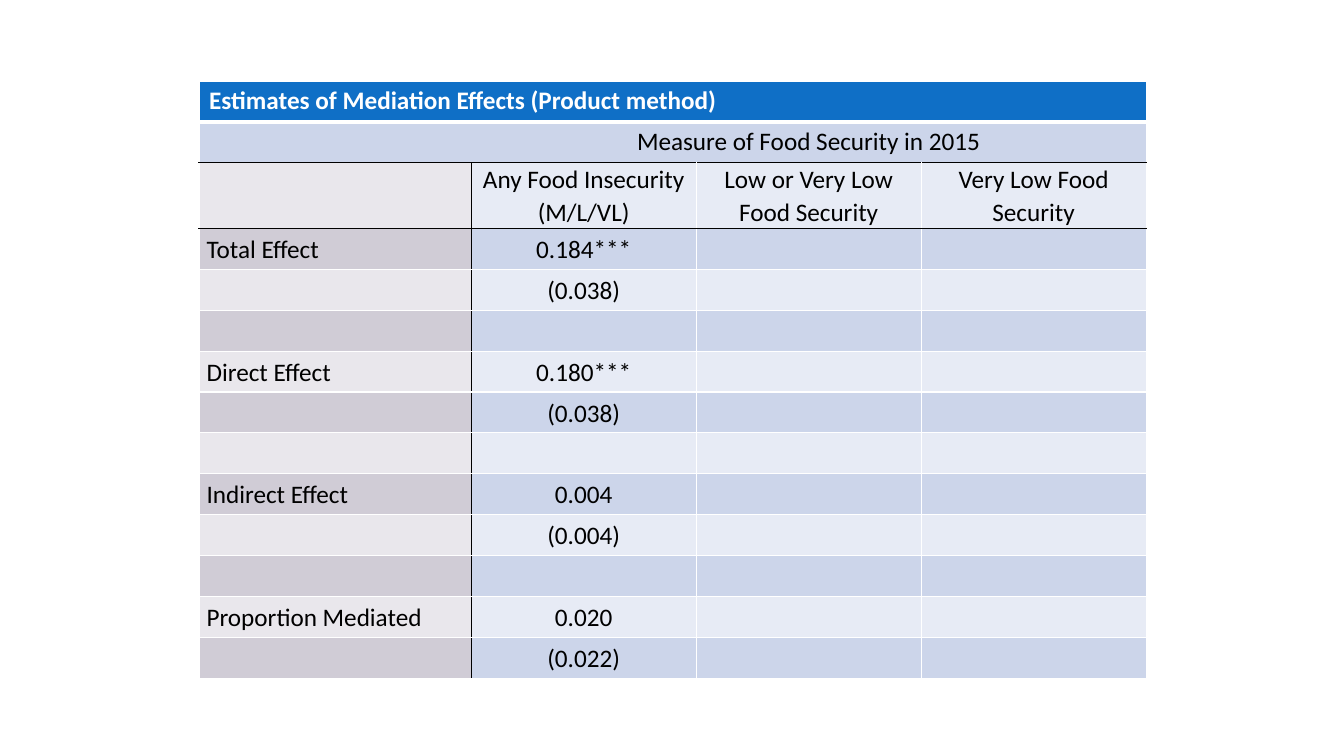
from dataclasses import dataclass

from lxml.etree import SubElement
from pptx import Presentation
from pptx.dml.color import RGBColor
from pptx.enum.text import MSO_ANCHOR, PP_ALIGN
from pptx.oxml.ns import qn
from pptx.util import Pt

COLORS = {
    "title": "0F6FC6",
    "white": "FFFFFF",
    "black": "000000",
    "label_dark": "D0CCD6",
    "label_light": "E9E7EC",
    "value_dark": "CCD5EA",
    "value_light": "E7EBF5",
}
COLUMN_WIDTHS = [194.4, 160.7, 160.7, 160.7]
ROW_HEIGHT = 29.1
HEADING_HEIGHT = 46.5
TITLE_ROW, MEASURE_ROW, HEADING_ROW = range(3)


@dataclass
class Effect:
    label: str
    estimate: str
    error: str


@dataclass
class Border:
    color: str
    width: float = 1


WHITE, THICK_WHITE, BLACK = Border("white"), Border("white", 3), Border("black")
HEADINGS = [
    "Any Food Insecurity\n(M/L/VL)",
    "Low or Very Low Food Security",
    "Very Low Food Security",
]
EFFECTS = [
    Effect("Total Effect", "0.184***", "(0.038)"),
    Effect("Direct Effect", "0.180***", "(0.038)"),
    Effect("Indirect Effect", "0.004", "(0.004)"),
    Effect("Proportion Mediated", "0.020", "(0.022)"),
]


def table_rows() -> list[list[str]]:
    rows = [
        ["Estimates of Mediation Effects (Product method)", "", "", ""],
        ["", "Measure of Food Security in 2015", "", ""],
        ["", *HEADINGS],
    ]
    for effect in EFFECTS:
        rows.append([effect.label, effect.estimate, "", ""])
        rows.append(["", effect.error, "", ""])
        rows.append([""] * 4)
    return rows[:-1]


def fill_name(row: int, column: int) -> str:
    if row == TITLE_ROW:
        return "title"
    kind = "label" if column == 0 and row >= HEADING_ROW else "value"
    return f"{kind}_{'dark' if row % 2 else 'light'}"


def border_below(row: int) -> Border:
    if row == TITLE_ROW:
        return THICK_WHITE
    return BLACK if row in (MEASURE_ROW, HEADING_ROW) else WHITE


def border_after(row: int, column: int) -> Border | None:
    if column == 0 and row == MEASURE_ROW:
        return None
    return BLACK if column == 0 and row >= HEADING_ROW else WHITE


def draw_borders(cell, row: int, column: int) -> None:
    properties = cell._tc.get_or_add_tcPr()
    edges = {
        "a:lnL": border_after(row, column - 1),
        "a:lnR": border_after(row, column),
        "a:lnT": border_below(row - 1),
        "a:lnB": border_below(row),
    }
    for tag, border in edges.items():
        line = SubElement(properties, qn(tag))
        if border is None:
            SubElement(line, qn("a:noFill"))
            continue
        line.set("w", str(Pt(border.width)))
        solid = SubElement(line, qn("a:solidFill"))
        SubElement(solid, qn("a:srgbClr")).set("val", COLORS[border.color])


def write_text(cell, text: str, row: int, column: int) -> None:
    paragraph = cell.text_frame.paragraphs[0]
    paragraph.text = text
    if row != TITLE_ROW:
        cell.vertical_anchor = MSO_ANCHOR.BOTTOM if row == HEADING_ROW else MSO_ANCHOR.MIDDLE
        paragraph.alignment = PP_ALIGN.CENTER if column else PP_ALIGN.LEFT
    if row >= HEADING_ROW:
        cell.margin_left = cell.margin_right = Pt(5.4)
        cell.margin_top = cell.margin_bottom = Pt(0)
        paragraph.line_spacing = 1.07
    for run in paragraph.runs:
        run.font.name = "Calibri"
        run.font.size = Pt(18)
        run.font.bold = row == TITLE_ROW
        color = "white" if row == TITLE_ROW else "black"
        run.font.color.rgb = RGBColor.from_string(COLORS[color])


def add_effects_table(slide) -> None:
    rows = table_rows()
    heights = [HEADING_HEIGHT if row == HEADING_ROW else ROW_HEIGHT for row in range(len(rows))]
    table = slide.shapes.add_table(
        len(rows), len(COLUMN_WIDTHS), Pt(142.2), Pt(57.8),
        Pt(sum(COLUMN_WIDTHS)), Pt(sum(heights)),
    ).table
    table.first_row = table.horz_banding = False
    for column, width in zip(table.columns, COLUMN_WIDTHS):
        column.width = Pt(width)
    for row, height in zip(table.rows, heights):
        row.height = Pt(height)
    for row, texts in enumerate(rows):
        for column, text in enumerate(texts):
            cell = table.cell(row, column)
            draw_borders(cell, row, column)
            cell.fill.solid()
            cell.fill.fore_color.rgb = RGBColor.from_string(COLORS[fill_name(row, column)])
            if text:
                write_text(cell, text, row, column)
    table.cell(TITLE_ROW, 0).merge(table.cell(TITLE_ROW, 3))
    table.cell(MEASURE_ROW, 1).merge(table.cell(MEASURE_ROW, 3))


def main() -> None:
    presentation = Presentation()
    presentation.slide_width = Pt(960)
    presentation.slide_height = Pt(540)
    slide = presentation.slides.add_slide(presentation.slide_layouts[6])
    add_effects_table(slide)
    presentation.save("out.pptx")


if __name__ == "__main__":
    main()
